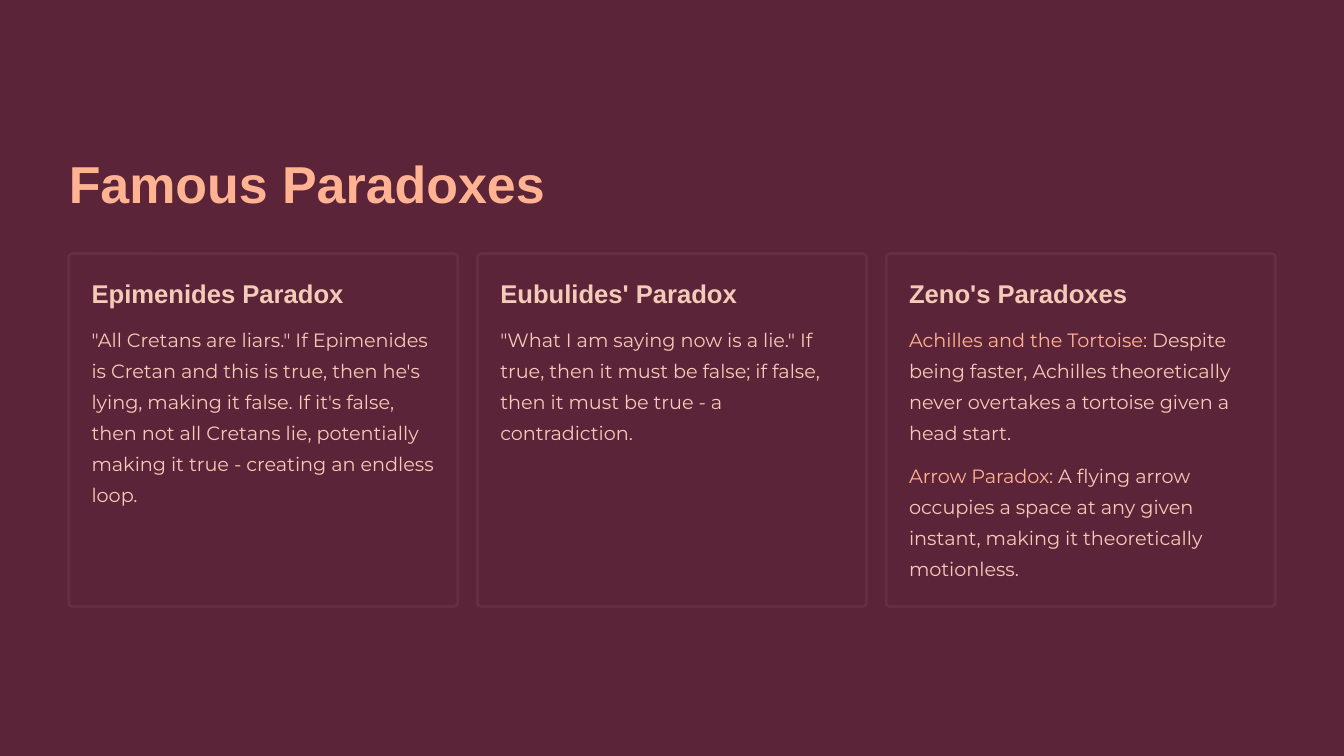
from pptx import Presentation
from pptx import util as u
from pptx.dml.color import RGBColor
from pptx.enum import shapes, text

TITLE = "Famous Paradoxes"
# Each card: heading, then passages as (highlighted lead, body, line count)
CARDS = [
    ("Epimenides Paradox", [
        ("", "\"All Cretans are liars.\" If Epimenides is Cretan and this is true, "
             "then he's lying, making it false. If it's false, then not all Cretans "
             "lie, potentially making it true - creating an endless loop.", 6),
    ]),
    ("Eubulides' Paradox", [
        ("", "\"What I am saying now is a lie.\" If true, then it must be false; "
             "if false, then it must be true - a contradiction.", 4),
    ]),
    ("Zeno's Paradoxes", [
        ("Achilles and the Tortoise:", " Despite being faster, Achilles theoretically "
         "never overtakes a tortoise given a head start.", 4),
        ("Arrow Paradox:", " A flying arrow occupies a space at any given instant, "
         "making it theoretically motionless.", 4),
    ]),
]

PLUM, BORDER, PEACH, CREAM = "5C2438", "662E42", "FFB393", "F4CAB8"

MARGIN = 2.08
CARD_TOP, CARD_WIDTH, CARD_HEIGHT, CARD_PITCH = 7.67, 11.76, 10.67, 12.36
PADDING = 0.69
PASSAGE_TOP, PASSAGE_WIDTH, PASSAGE_GAP = 9.7, 10.41, 0.36
LINE_POINTS = 26.5
LINE_HEIGHT = u.Pt(LINE_POINTS).cm


def color(value):
    return RGBColor.from_string(value)


def add_text(slide, box, runs, font_name, size, line_points, bold=False, wrap=False):
    """Add a one-paragraph text box; runs are (wording, colour) pairs."""
    shape = slide.shapes.add_textbox(*(u.Cm(length) for length in box))
    frame = shape.text_frame
    frame.word_wrap = wrap
    frame.vertical_anchor = text.MSO_ANCHOR.TOP
    frame.margin_left = frame.margin_right = frame.margin_top = frame.margin_bottom = 0
    paragraph = frame.paragraphs[0]
    paragraph.line_spacing = u.Pt(line_points)
    for wording, run_color in runs:
        run = paragraph.add_run()
        run.text = wording
        run.font.name = font_name
        run.font.size = u.Pt(size)
        run.font.bold = bold
        run.font.color.rgb = color(run_color)


def add_card(slide, left, heading, passages):
    card = slide.shapes.add_shape(
        shapes.MSO_SHAPE.ROUNDED_RECTANGLE,
        u.Cm(left), u.Cm(CARD_TOP), u.Cm(CARD_WIDTH), u.Cm(CARD_HEIGHT))
    card.adjustments[0] = 0.01
    card.shadow.inherit = False
    card.fill.solid()
    card.fill.fore_color.rgb = color(PLUM)
    card.line.color.rgb = color(BORDER)
    card.line.width = u.Pt(2.4)

    inner_left = left + PADDING
    add_text(slide, (inner_left, CARD_TOP + PADDING, 7.92, 0.99),
             [(heading, CREAM)], "Arial", 22, 28, bold=True)
    top = PASSAGE_TOP
    for lead, body, line_count in passages:
        height = line_count * LINE_HEIGHT
        runs = [(lead, PEACH), (body, CREAM)] if lead else [(body, CREAM)]
        add_text(slide, (inner_left, top, PASSAGE_WIDTH, height),
                 runs, "Montserrat", 16.5, LINE_POINTS, wrap=True)
        top += height + PASSAGE_GAP


def main():
    presentation = Presentation()
    presentation.slide_width = u.Cm(40.64)
    presentation.slide_height = u.Cm(22.86)
    slide = presentation.slides.add_slide(presentation.slide_layouts[6])
    slide.background.fill.solid()
    slide.background.fill.fore_color.rgb = color(PLUM)

    add_text(slide, (MARGIN, 4.5, 15.85, 1.98), [(TITLE, PEACH)],
             "Arial", 44.5, 56, bold=True)
    for index, (heading, passages) in enumerate(CARDS):
        add_card(slide, MARGIN + index * CARD_PITCH, heading, passages)
    presentation.save("out.pptx")


if __name__ == "__main__":
    main()
